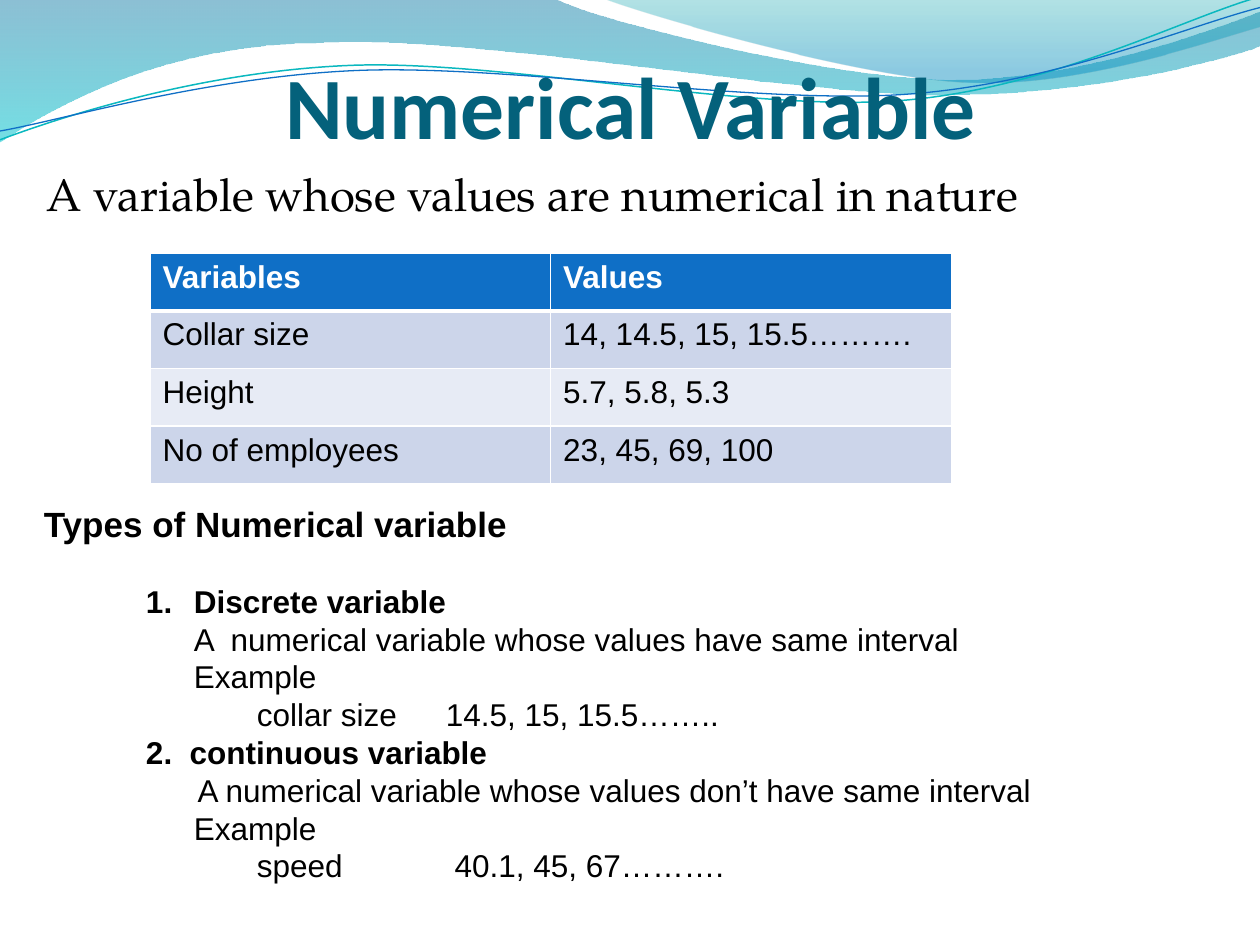
"""Build a slide on numerical variables with a wave header, a table and a list."""
from lxml import etree
from pptx import Presentation
from pptx import util as u
from pptx.dml.color import RGBColor
from pptx.enum import text
from pptx.oxml import ns

BLACK = RGBColor(0, 0, 0)
WHITE = RGBColor(255, 255, 255)
TITLE_TEAL = RGBColor(0x04, 0x61, 0x7B)
HEADER_BLUE = RGBColor(0x0F, 0x6F, 0xC6)
LINE_TEAL = RGBColor(0x0A, 0xB8, 0xBF)
BAND_DARK = RGBColor(0xCC, 0xD5, 0xEA)
BAND_LIGHT = RGBColor(0xE7, 0xEB, 0xF5)
WAVE_BLUE = RGBColor(0x00, 0x74, 0xA1)
WAVE_CYAN = RGBColor(0x00, 0xC6, 0xCF)
CREST_TEAL = RGBColor(0x00, 0xA1, 0xA9)
CREST_BLUE = RGBColor(0x00, 0x8B, 0xBF)


def draw_outline(page, start, segments, closed):
    builder = page.shapes.build_freeform(*(u.Inches(value) for value in start))
    points = [(u.Inches(x), u.Inches(y)) for segment in segments for x, y in segment]
    builder.add_line_segments(points, close=closed)
    shape = builder.convert_to_shape()
    shape.shadow.inherit = False
    steps = iter(list(shape._element.iter(ns.qn("a:lnTo"))))
    for segment in segments:
        first, *others = [next(steps) for point in segment]
        if others:
            curve = etree.Element(ns.qn("a:cubicBezTo"))
            first.addprevious(curve)
            for step in (first, *others):
                curve.append(step[0])
                step.getparent().remove(step)
    return shape


def add_text(page, place, lines, frame_format):
    box = page.shapes.add_textbox(*(u.Inches(value) for value in place))
    for name, value in frame_format.items():
        setattr(box.text_frame, name, value)
    for index, (wording, font_format, para_format) in enumerate(lines):
        para = box.text_frame.paragraphs[0] if index == 0 else box.text_frame.add_paragraph()
        for name, value in para_format.items():
            setattr(para, name, value)
        span = para.add_run()
        span.text = wording
        font_values = dict(font_format)
        span.font.color.rgb = font_values.pop("color", BLACK)
        for name, value in font_values.items():
            setattr(span.font, name, value)
    return box


deck = Presentation()
deck.slide_width, deck.slide_height = u.Inches(10), u.Inches(7.5)
page = deck.slides.add_slide(deck.slide_layouts[6])

waves = [
    ((0, -0.01),
     [[(4.4, -0.01)],
      [(4.76, 0.17), (6.64, 0.63), (7.58, 0.63)],
      [(8.53, 0.63), (9.58, 0.26), (10, 0.09)],
      [(10.01, 0.36)],
      [(9.83, 0.44), (8.7, 0.76), (7.46, 0.75)],
      [(6.22, 0.75), (3.82, 0.28), (2.57, 0.34)],
      [(1.29, 0.35), (0.46, 0.83), (-0.01, 1.13)],
      [(0, -0.01)]],
     [(0, WAVE_BLUE, 45), (1, WAVE_CYAN, 55)]),
    ((4.79, -0.01),
     [[(5.09, 0.11), (6.82, 0.62), (7.69, 0.65)],
      [(8.56, 0.69), (9.61, 0.32), (10, 0.21)],
      [(10, 0)],
      [(4.79, -0.01)]],
     [(0, CREST_TEAL, 30), (0.8, CREST_BLUE, 45)]),
]
for start, segments, stops in waves:
    wave = draw_outline(page, start, segments, True)
    wave.line.fill.background()
    wave.fill.gradient()
    wave.fill.gradient_angle = 270
    for stop, (position, color, opacity) in zip(wave.fill.gradient_stops, stops):
        stop.position = position
        stop.color.rgb = color
    for node, (position, color, opacity) in zip(wave._element.iter(ns.qn("a:gs")), stops):
        etree.SubElement(node[0], ns.qn("a:alpha"), val=str(opacity * 1000))

strands = [
    ((0, 1.11),
     [[(0.48, 0.93), (1.58, 0.57), (2.77, 0.52)],
      [(3.95, 0.47), (5.93, 0.89), (7.13, 0.8)],
      [(8.33, 0.71), (9.38, 0.15), (9.98, -0.02)]],
     LINE_TEAL, 0.85),
    ((0, 1.04),
     [[(0.47, 0.96), (1.64, 0.61), (2.83, 0.56)],
      [(4.03, 0.51), (5.97, 0.83), (7.17, 0.75)],
      [(8.36, 0.67), (9.41, 0.21), (10, 0.06)]],
     HEADER_BLUE, 0.75),
]
for start, segments, color, width in strands:
    strand = draw_outline(page, start, segments, False)
    strand.fill.background()
    strand.line.color.rgb = color
    strand.line.width = u.Pt(width)

add_text(
    page, (0.51, 0, 9, 1.25),
    [("Numerical Variable",
      {"name": "Calibri", "size": u.Pt(50), "bold": True, "color": TITLE_TEAL},
      {"alignment": text.PP_ALIGN.CENTER})],
    {"word_wrap": True, "vertical_anchor": text.MSO_ANCHOR.BOTTOM,
     "margin_left": 0, "margin_right": 0, "margin_bottom": 0})
add_text(
    page, (0.27, 1.35, 8.52, 0.59),
    [("A variable whose values are numerical in nature",
      {"name": "TeX Gyre Pagella", "size": u.Pt(26)},
      {"line_spacing": 0.8, "space_before": u.Pt(5.2)})],
    {"word_wrap": True})

rows = [
    ("Variables", "Values"),
    ("Collar size", "14, 14.5, 15, 15.5………."),
    ("Height", "5.7, 5.8, 5.3"),
    ("No of employees", "23, 45, 69, 100"),
]
table = page.shapes.add_table(
    len(rows), 2, u.Inches(1.19), u.Inches(2.01), u.Inches(6.36), u.Inches(1.83)).table
for row_index, row in enumerate(rows):
    header = row_index == 0
    widths = {"lnL": 1, "lnR": 1, "lnT": 3 if row_index == 1 else 1, "lnB": 3 if header else 1}
    for column_index, wording in enumerate(row):
        cell = table.cell(row_index, column_index)
        properties = cell._tc.get_or_add_tcPr()
        for side, width in widths.items():
            border = etree.SubElement(properties, ns.qn(f"a:{side}"), w=str(u.Pt(width)))
            paint = etree.SubElement(border, ns.qn("a:solidFill"))
            etree.SubElement(paint, ns.qn("a:srgbClr"), val=str(WHITE))
        cell.fill.solid()
        cell.fill.fore_color.rgb = HEADER_BLUE if header else (BAND_LIGHT, BAND_DARK)[row_index % 2]
        cell.text = wording
        font = cell.text_frame.paragraphs[0].runs[0].font
        font.color.rgb = WHITE if header else BLACK
        for name, value in {"name": "Arial", "size": u.Pt(18), "bold": header}.items():
            setattr(font, name, value)

heading = {"name": "Arial", "size": u.Pt(20), "bold": True}
strong = {"name": "Arial", "size": u.Pt(18), "bold": True}
plain = {**strong, "bold": False}
outline = [
    ("Types of Numerical variable", heading, {}, 0, 0),
    ("Discrete variable", strong, {"space_before": u.Pt(21.2)}, 1.19, -0.38),
    ("A  numerical variable whose values have same interval", plain, {}, 1.19, 0),
    ("Example", plain, {}, 1.19, 0),
    ("\t\tcollar size\t14.5, 15, 15.5……..", plain, {}, 1.19, -0.38),
    ("2.  continuous variable", strong, {}, 1.19, -0.38),
    ("A numerical variable whose values don’t have same interval", plain, {}, 1.22, 0),
    ("Example", plain, {}, 1.19, 0),
    ("\t\tspeed\t\t 40.1, 45, 67……….", plain, {}, 1.19, -0.38),
]
types_box = add_text(
    page, (0.25, 3.94, 8.58, 3.47), [line[:3] for line in outline], {"word_wrap": True})
for para, (*_, margin, indent) in zip(types_box.text_frame.paragraphs, outline):
    properties = para._p.get_or_add_pPr()
    properties.set("marL", str(u.Inches(margin)))
    properties.set("indent", str(u.Inches(indent)))
numbered = types_box.text_frame.paragraphs[1]._p.get_or_add_pPr()
etree.SubElement(numbered, ns.qn("a:buFont"), typeface="+mj-lt")
etree.SubElement(numbered, ns.qn("a:buAutoNum"), type="arabicPeriod")

deck.save("out.pptx")
